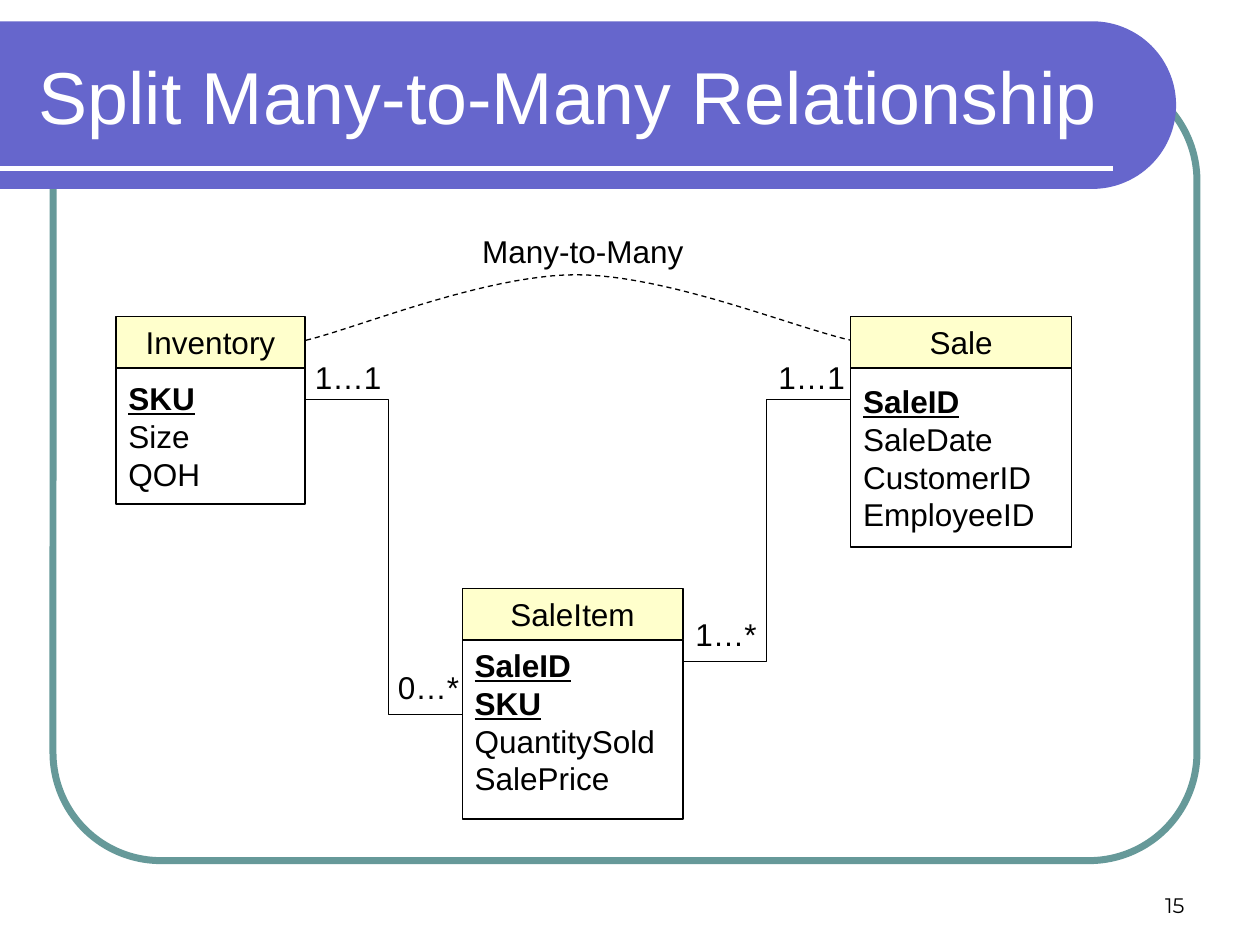
import math
import pptx
import pptx.dml.color
import pptx.enum.dml
import pptx.enum.shapes
import pptx.enum.text
import pptx.util
from lxml import etree
from pptx.util import Cm, Pt

SHAPE = pptx.enum.shapes.MSO_SHAPE
ANCHOR = pptx.enum.text.MSO_ANCHOR
ALIGN = pptx.enum.text.PP_ALIGN

COLORS = {"band": "6666CC", "frame": "669999", "header": "FFFFCC",
          "ink": "000000", "paper": "FFFFFF"}

# Content, lengths in cm
TITLE = "Split Many-to-Many Relationship"
PAGE = "15"
HEADER_H = 1.04
ENTITIES = [  # name, left, top, width, body height, body anchor, keys, other fields
    ("Sale", 17.15, 6.38, 4.45, 3.61, ANCHOR.MIDDLE,
     ["SaleID"], ["SaleDate", "CustomerID", "EmployeeID"]),
    ("Inventory", 2.34, 6.38, 3.81, 2.74, ANCHOR.MIDDLE,
     ["SKU"], ["Size", "QOH"]),
    ("SaleItem", 9.32, 11.86, 4.45, 3.61, ANCHOR.TOP,
     ["SaleID", "SKU"], ["QuantitySold", "SalePrice"]),
]
LINKS = [  # start x, start y, bend x, end x, end y
    (17.15, 8.05, 15.45, 13.77, 13.34),
    (6.15, 8.05, 7.83, 9.32, 14.4),
]
LABELS = [  # text, left, top, width
    ("Many-to-Many", 9.47, 4.55, 4.57),
    ("1…1", 6.1, 7.09, 1.85),
    ("0…*", 7.77, 13.34, 1.75),
    ("1…*", 13.77, 12.27, 1.75),
    ("1…1", 15.44, 7.09, 1.85),
]
ARC = [  # Bézier segments of the dashed curve
    ((6.17, 6.86), (7.09, 6.65), (9.78, 5.54), (11.61, 5.54)),
    ((11.61, 5.54), (13.44, 5.54), (16, 6.6), (17.15, 6.86)),
]

prs = pptx.Presentation()
prs.slide_width, prs.slide_height = Cm(25.4), Cm(19.05)
s = prs.slides.add_slide(prs.slide_layouts[6])


def rgb(name):
    return pptx.dml.color.RGBColor.from_string(COLORS[name])


def paint(sp, fill=None, line=None, weight=0.75):
    sp.shadow.inherit = False
    if fill:
        sp.fill.solid()
        sp.fill.fore_color.rgb = rgb(fill)
    else:
        sp.fill.background()
    if line:
        sp.line.color.rgb = rgb(line)
        sp.line.width = Pt(weight)
    else:
        sp.line.fill.background()
    return sp


def box(kind, left, top, width, height, **style):
    sp = s.shapes.add_shape(kind, Cm(left), Cm(top), Cm(width), Cm(height))
    return paint(sp, **style)


def outline(points, close=False, **style):
    pts = [(Cm(x), Cm(y)) for x, y in points]
    fb = s.shapes.build_freeform(*pts[0])
    fb.add_line_segments(pts[1:], close=close)
    return paint(fb.convert_to_shape(), **style)


def write(sp, lines, size=18, font="Arial", color="ink", align=ALIGN.LEFT,
          anchor=ANCHOR.TOP, wrap=True, keys=0):
    """Write one paragraph per line; the first `keys` are bold and underlined."""
    tf = sp.text_frame
    tf.word_wrap = wrap
    tf.vertical_anchor = anchor
    for i, line in enumerate(lines):
        p = tf.add_paragraph() if i else tf.paragraphs[0]
        p.alignment = align
        p.add_run().text = line
        p.font.name, p.font.size = font, Pt(size)
        p.font.color.rgb = rgb(color)
        p.font.bold = p.font.underline = i < keys


def text(lines, left, top, width, height, **style):
    sp = s.shapes.add_textbox(Cm(left), Cm(top), Cm(width), Cm(height))
    write(sp, lines, **style)


def bezier(a, b, c, d, steps=24):
    for i in range(steps + 1):
        t = i / steps
        u = 1 - t
        yield tuple(u**3 * a[k] + 3 * u * u * t * b[k] + 3 * u * t * t * c[k]
                    + t**3 * d[k] for k in (0, 1))


# Frame and title band with a round right end
frame = box(SHAPE.ROUNDED_RECTANGLE, 1.07, 1.47, 23.06, 15.88, line="frame", weight=4)
frame.adjustments[0] = 0.137

cx, cy, radius = 22.02, 2.12, 1.69
round_end = [(cx + radius * math.cos(math.radians(a)),
              cy + radius * math.sin(math.radians(a))) for a in range(-90, 91, 3)]
outline([(0, cy - radius), *round_end, (0, cy + radius)], close=True, fill="band")

rule = s.shapes.add_connector(pptx.enum.shapes.MSO_CONNECTOR.STRAIGHT,
                              0, Cm(3.39), Cm(22.43), Cm(3.39))
rule.line.color.rgb = rgb("paper")
rule.line.width = Pt(3)
etree.SubElement(rule._element.spPr, pptx.oxml.ns.qn("a:effectLst"))

text([TITLE], 0.53, 0.64, 22.28, 2.54, size=42, color="paper", anchor=ANCHOR.MIDDLE)
text([PAGE], 18.21, 17.35, 5.92, 1.27, size=12, font="Montserrat",
     align=ALIGN.RIGHT, anchor=ANCHOR.BOTTOM)

# Entities: header over a list of fields
for name, x, y, w, h, anchor, keys, fields in ENTITIES:
    head = box(SHAPE.RECTANGLE, x, y, w, HEADER_H, fill="header", line="ink")
    write(head, [name], align=ALIGN.CENTER, anchor=ANCHOR.MIDDLE)
    body = box(SHAPE.RECTANGLE, x, y + HEADER_H, w, h, line="ink")
    write(body, keys + fields, anchor=anchor, keys=len(keys))

# Relationships
curve = outline([pt for seg in ARC for pt in bezier(*seg)], line="ink")
curve.line.dash_style = pptx.enum.dml.MSO_LINE.DASH
for x1, y1, bend, x2, y2 in LINKS:
    outline([(x1, y1), (bend, y1), (bend, y2), (x2, y2)], line="ink")
for label, x, y, w in LABELS:
    text([label], x, y, w, 1.02, wrap=False)

prs.save("out.pptx")
